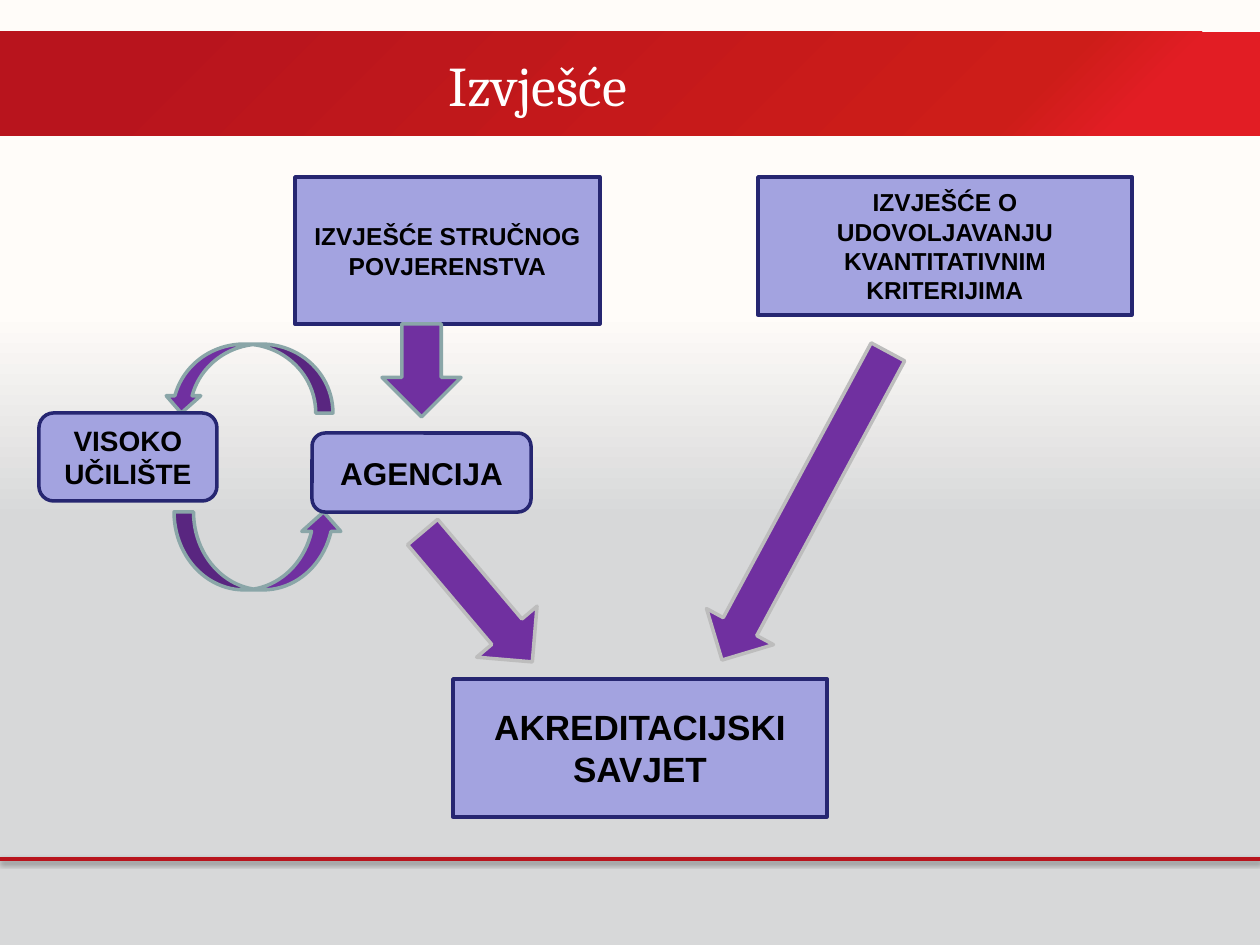
from lxml import etree
from pptx import Presentation
from pptx.dml.color import RGBColor
from pptx.enum.shapes import MSO_CONNECTOR, MSO_SHAPE
from pptx.enum.text import MSO_ANCHOR, PP_ALIGN
from pptx.oxml import parse_xml
from pptx.oxml.ns import nsdecls, qn
from pptx.util import Pt

RECT, ROUND = MSO_SHAPE.RECTANGLE, MSO_SHAPE.ROUNDED_RECTANGLE
DOWN, CURVED = MSO_SHAPE.DOWN_ARROW, MSO_SHAPE.CURVED_DOWN_ARROW
MIDDLE, CENTER = MSO_ANCHOR.MIDDLE, PP_ALIGN.CENTER

EMU_PER_PX = 914400 / 126
SLIDE_W, SLIDE_H = 1260, 945

THEME = {
    "title_font": "Cambria", "title_size": 32, "title_color": "FFFFFF",
    "box_font": "Arial", "box_text": "000000",
    "box_fill": "A3A3E0", "box_line": "262671",
    "arrow_fill": "7030A0", "flow_line": "8AA6A8", "result_line": "BDBDBD",
    "rule": "B8141D", "line_width": 2,
    "backdrop": [(45, "D7D8D9"), (67, "FFFCF9")],
    "band": [(11, "E21D24"), (20, "CD1D19"), (89, "B8141D")],
}

# Content: places are (left, top, width, height) in px
TITLE = ("Izvješće", (29, 45, 1017, 78))
BAND = (0, 32, SLIDE_W, 104)
RULE_Y = 859

# Arrows: preset, place, rotation, flip attribute, line colour
EXCHANGE_ARROWS = [
    (CURVED, (164, 344, 169, 69), 0, "flipH", "flow_line"),
    (CURVED, (174, 512, 169, 78), 0, "flipV", "flow_line"),
]
RESULT_ARROWS = [
    (DOWN, (438, 512, 79, 170), 319.8, None, "result_line"),
    (DOWN, (767, 331, 76, 350), 28.3, None, "result_line"),
]
REPORT_ARROW = [(DOWN, (382, 324, 79, 93), 0, None, "flow_line")]

# Boxes: text, preset, place, type size
AGENCY = [("AGENCIJA", ROUND, (312, 433, 219, 79), 18)]
OTHER_BOXES = [
    ("IZVJEŠĆE STRUČNOG POVJERENSTVA", RECT, (295, 177, 305, 147), 14),
    ("IZVJEŠĆE O UDOVOLJAVANJU KVANTITATIVNIM KRITERIJIMA", RECT,
     (758, 177, 374, 138), 14),
    ("AKREDITACIJSKI SAVJET", RECT, (453, 679, 374, 138), 20),
    ("VISOKO UČILIŠTE", ROUND, (39, 413, 178, 88), 16),
]


def px(*values):
    return [round(value * EMU_PER_PX) for value in values]


def color(name):
    return RGBColor.from_string(THEME.get(name, name))


def set_gradient(fill, owner, stops, angle):
    fill.gradient()
    fill.gradient_angle = angle
    stop_list = owner.find(".//" + qn("a:gsLst"))
    for old in list(stop_list):
        stop_list.remove(old)
    for position, rgb in stops:
        stop = etree.SubElement(stop_list, qn("a:gs"), pos=str(position * 1000))
        etree.SubElement(stop, qn("a:srgbClr"), val=rgb)


def set_text(shape, text, font_name, size, text_color, bold):
    frame = shape.text_frame
    frame.word_wrap = True
    frame.vertical_anchor = MIDDLE
    paragraph = frame.paragraphs[0]
    paragraph.text = text
    paragraph.alignment = CENTER
    font = paragraph.font
    font.name, font.size, font.bold = font_name, Pt(size), bold
    font.color.rgb = color(text_color)


def add_outlined(preset, place, fill_color, line_color):
    shape = slide.shapes.add_shape(preset, *px(*place))
    shape.shadow.inherit = False
    shape.fill.solid()
    shape.fill.fore_color.rgb = color(fill_color)
    shape.line.color.rgb = color(line_color)
    shape.line.width = Pt(THEME["line_width"])
    return shape


def add_arrows(arrows):
    for preset, place, rotation, flip, line_color in arrows:
        arrow = add_outlined(preset, place, "arrow_fill", line_color)
        arrow.rotation = rotation
        if flip:
            arrow._element.spPr.find(qn("a:xfrm")).set(flip, "1")


def add_boxes(boxes):
    for text, preset, place, size in boxes:
        box = add_outlined(preset, place, "box_fill", "box_line")
        set_text(box, text, THEME["box_font"], size, "box_text", True)


prs = Presentation()
prs.slide_width, prs.slide_height = px(SLIDE_W, SLIDE_H)
slide = prs.slides.add_slide(prs.slide_layouts[6])

# Backdrop and title band
set_gradient(slide.background.fill, slide._element, THEME["backdrop"], 90)
band = slide.shapes.add_shape(RECT, *px(*BAND))
band.shadow.inherit = False
band.line.fill.background()
set_gradient(band.fill, band._element, THEME["band"], 135)

# Footer rule with a soft shadow
rule = slide.shapes.add_connector(
    MSO_CONNECTOR.STRAIGHT, *px(0, RULE_Y, SLIDE_W, RULE_Y))
rule.line.color.rgb = color("rule")
rule.line.width = Pt(THEME["line_width"])
rule._element.spPr.append(parse_xml(
    f'<a:effectLst {nsdecls("a")}>'
    f'<a:outerShdw blurRad="{Pt(3.1)}" dist="{Pt(1.6)}" dir="5400000">'
    '<a:srgbClr val="000000"><a:alpha val="38000"/></a:srgbClr>'
    '</a:outerShdw></a:effectLst>'))

# Title
title_text, title_place = TITLE
title = slide.shapes.add_textbox(*px(*title_place))
set_text(title, title_text, THEME["title_font"], THEME["title_size"],
         "title_color", False)

# Flow diagram, back to front
add_arrows(EXCHANGE_ARROWS)
add_boxes(AGENCY)
add_arrows(RESULT_ARROWS)
add_boxes(OTHER_BOXES[:1])
add_arrows(REPORT_ARROW)
add_boxes(OTHER_BOXES[1:])

prs.save("out.pptx")
